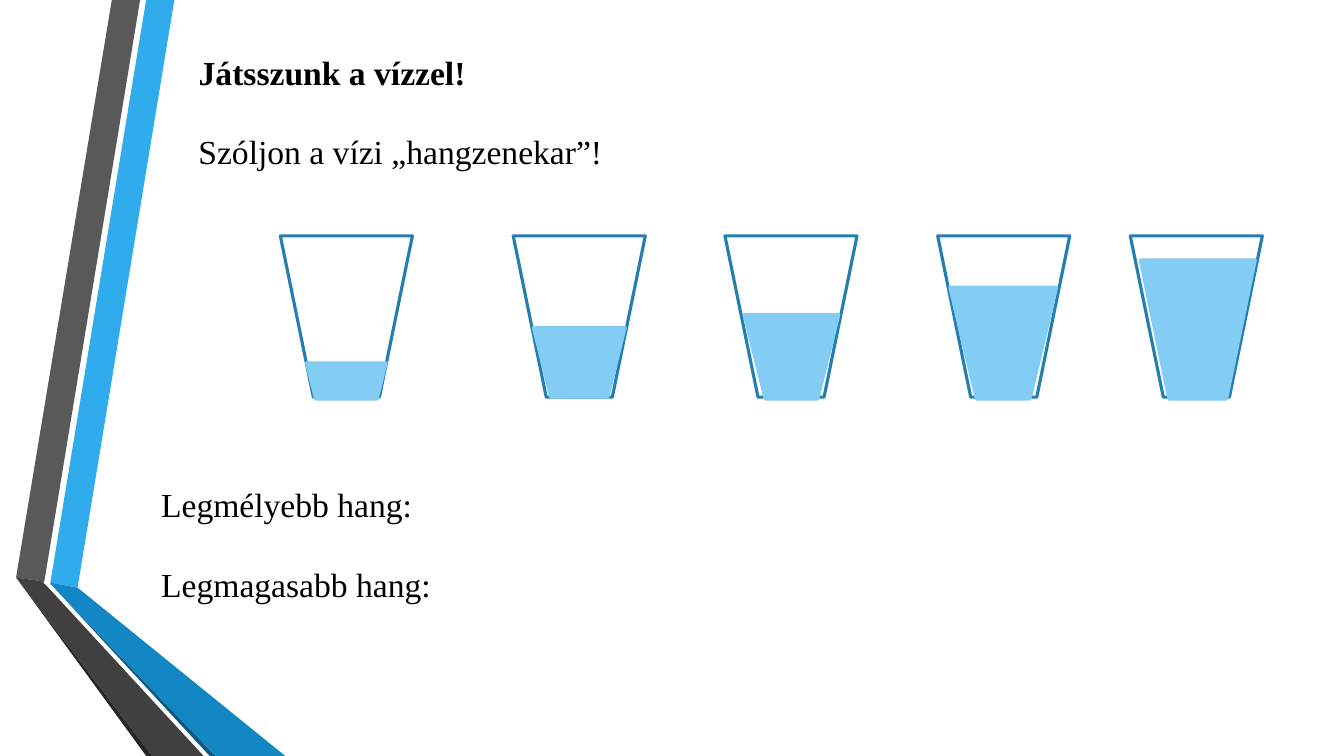
from dataclasses import dataclass

from pptx import Presentation
from pptx.dml.color import RGBColor
from pptx.enum.shapes import MSO_SHAPE
from pptx.enum.text import MSO_ANCHOR, MSO_AUTO_SIZE, PP_ALIGN
from pptx.util import Inches, Pt

TRAPEZOID = MSO_SHAPE.TRAPEZOID
TOP = MSO_ANCHOR.TOP
LEFT = PP_ALIGN.LEFT
FIT_SHAPE = MSO_AUTO_SIZE.SHAPE_TO_FIT_TEXT


@dataclass(frozen=True)
class Theme:
    """Colours, font and sizes of the slide."""
    font: str = "Times New Roman"
    text_size: float = 24
    line_width: float = 2.25
    text: str = "000000"
    glass: str = "FFFFFF"
    glass_edge: str = "247FAF"
    water: str = "83CDF4"
    blue: str = "30ACEC"
    blue_fold: str = "1287C3"
    blue_edge: str = "0C5A82"
    gray: str = "595959"
    gray_fold: str = "404040"
    gray_edge: str = "262626"


THEME = Theme()

RIBBON_UNIT = Inches(0.01)
RIBBON_FACES = [
    (THEME.blue, [(34, 578), (61, 583), (157, 0), (129, 0)]),
    (THEME.gray, [(123, 0), (95, 0), (0, 573), (28, 577)]),
    (THEME.gray_edge, [(0, 573), (129, 750), (135, 750)]),
    (THEME.blue_edge, [(34, 579), (192, 750), (198, 750)]),
    (THEME.blue_fold, [(34, 579), (198, 750), (267, 750), (61, 583), (34, 578)]),
    (THEME.gray_fold, [(186, 750), (32, 583), (27, 578), (28, 577), (0, 573), (135, 750)]),
]

GLASS_WIDTH = 1.31
GLASSES = [
    (0, 0.26, 1.26, 0.79, 0.36),
    (2.31, 0.20, 0.91, 0.91, 0.69),
    (4.41, 0.19, 0.78, 0.94, 0.84),
    (6.52, 0.12, 0.51, 1.06, 1.11),
    (8.43, 0.10, 0.24, 1.14, 1.38),
]


def place(shape, left, top, width, height):
    """Move and size a shape, in inches."""
    shape.left, shape.top = Inches(left), Inches(top)
    shape.width, shape.height = Inches(width), Inches(height)


def fill_solid(shape, color):
    """Give a shape a plain fill and no shadow."""
    shape.shadow.inherit = False
    shape.fill.solid()
    shape.fill.fore_color.rgb = RGBColor.from_string(color)


def add_ribbons(slide, left, top):
    """Draw the two folded ribbons from a top left corner."""
    ribbons = slide.shapes.add_group_shape()
    for color, points in RIBBON_FACES:
        builder = ribbons.shapes.build_freeform(*points[0], scale=RIBBON_UNIT)
        builder.add_line_segments(points[1:], close=True)
        face = builder.convert_to_shape(Inches(left), Inches(top))
        fill_solid(face, color)
        face.line.fill.background()


def write_line(shape, text, bold=False):
    """Write one left-aligned line into a text shape."""
    frame = shape.text_frame
    frame.text = text
    frame.word_wrap = False
    frame.auto_size = FIT_SHAPE
    frame.vertical_anchor = TOP
    paragraph = frame.paragraphs[0]
    paragraph.alignment = LEFT
    paragraph.font.name = THEME.font
    paragraph.font.size = Pt(THEME.text_size)
    paragraph.font.bold = bold
    paragraph.font.color.rgb = RGBColor.from_string(THEME.text)


def add_heading(slide, left, top):
    """Place the title and the line under it."""
    place(slide.shapes.title, left, top, 2.88, 0.5)
    write_line(slide.shapes.title, "Játsszunk a vízzel!", bold=True)
    add_text(slide, "Szóljon a vízi „hangzenekar”!", left, top + 0.79, 4.24)


def add_text(slide, text, left, top, width):
    """Add a one-line text box."""
    box = slide.shapes.add_textbox(Inches(left), Inches(top), Inches(width), Inches(0.5))
    write_line(box, text)


def add_tapered(slide, box, fill, edge):
    """Add a trapezoid that narrows downwards."""
    shape = slide.shapes.add_shape(TRAPEZOID, *map(Inches, box))
    shape.rotation = 180
    fill_solid(shape, fill)
    shape.line.color.rgb = RGBColor.from_string(edge)
    shape.line.width = Pt(THEME.line_width)


def add_glasses(slide, left, top, height):
    """Draw the row of glasses with rising water levels."""
    for offset, inset, depth, water_width, water_height in GLASSES:
        glass_left = left + offset
        add_tapered(slide, (glass_left, top, GLASS_WIDTH, height), THEME.glass, THEME.glass_edge)
        water = (glass_left + inset, top + depth, water_width, water_height)
        add_tapered(slide, water, THEME.water, THEME.water)


def add_answers(slide, left, top):
    """Place the two answer prompts."""
    add_text(slide, "Legmélyebb hang:", left, top, 2.8)
    add_text(slide, "Legmagasabb hang:", left, top + 0.8, 2.98)


def main():
    """Build and save the slide."""
    presentation = Presentation()
    presentation.slide_width = Inches(13.33)
    presentation.slide_height = Inches(7.5)
    slide = presentation.slides.add_slide(presentation.slide_layouts.get_by_name("Title Only"))
    add_ribbons(slide, 0.16, 0)
    add_heading(slide, 1.87, 0.46)
    add_glasses(slide, 2.78, 2.34, 1.6)
    add_answers(slide, 1.5, 4.75)
    presentation.save("out.pptx")


if __name__ == "__main__":
    main()
